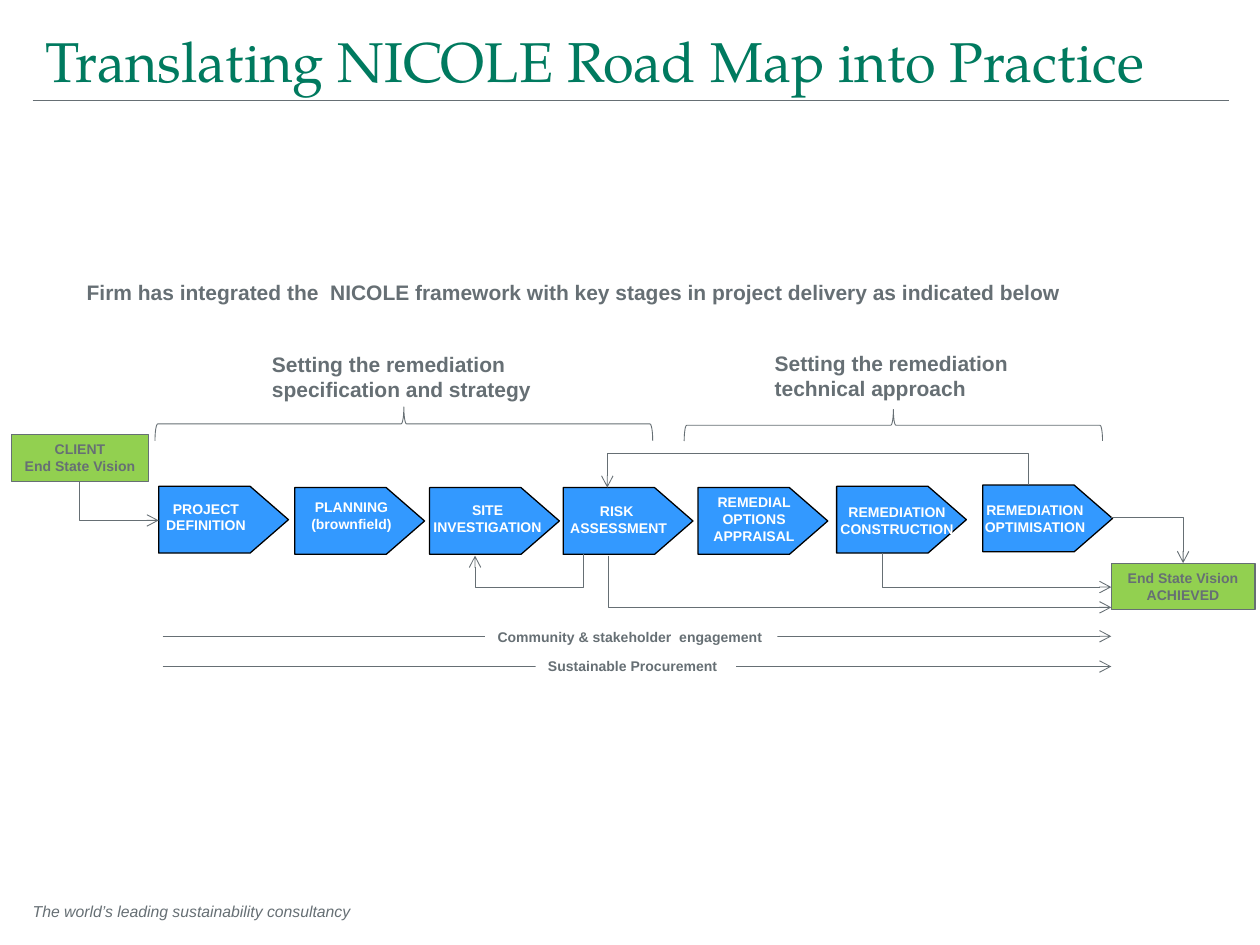
from lxml import etree
from pptx import Presentation
from pptx.dml.color import RGBColor
from pptx.enum import shapes, text
from pptx.oxml import ns
from pptx.util import Inches, Pt

COLORS = {"grey": "666F74", "blue": "3399FF", "green": "92D050",
          "title": "007A5F", "white": "FFFFFF", "black": "000000"}
SHAPE = shapes.MSO_SHAPE
LINK = shapes.MSO_CONNECTOR
CENTER = text.PP_ALIGN.CENTER


def rgb(name):
    return RGBColor.from_string(COLORS[name])


def write(sp, lines, size=8, color="grey", font="Arial", bold=True, italic=False,
          align=text.PP_ALIGN.LEFT, wrap=False, insets=(0.1, 0.05),
          anchor=text.MSO_ANCHOR.TOP):
    tf = sp.text_frame
    tf.word_wrap = wrap
    tf.vertical_anchor = anchor
    tf.margin_left = tf.margin_right = Inches(insets[0])
    tf.margin_top = tf.margin_bottom = Inches(insets[1])
    for i, line in enumerate(lines):
        p = tf.add_paragraph() if i else tf.paragraphs[0]
        p.text = line
        p.alignment = align
        p.font.name, p.font.size = font, Pt(size)
        p.font.bold, p.font.italic = bold, italic
        p.font.color.rgb = rgb(color)


def label(s, box, lines, **style):
    write(s.shapes.add_textbox(*map(Inches, box)), lines, **style)


def shape(s, kind, box, fill=None, line=None, width=0.75):
    sp = s.shapes.add_shape(kind, *map(Inches, box))
    sp.shadow.inherit = False
    if fill:
        sp.fill.solid()
        sp.fill.fore_color.rgb = rgb(fill)
    else:
        sp.fill.background()
    if line:
        sp.line.color.rgb = rgb(line)
        sp.line.width = Pt(width)
    else:
        sp.line.fill.background()
    return sp


def connect(s, start, end, kind=LINK.STRAIGHT, arrow=True):
    c = s.shapes.add_connector(kind, *map(Inches, start + end))
    c.line.color.rgb = rgb("grey")
    c.line.width = Pt(0.5)
    if arrow:
        ln = c.line._get_or_add_ln()
        etree.SubElement(ln, ns.qn("a:tailEnd"), type="arrow")
    etree.SubElement(c._element.spPr, ns.qn("a:effectLst"))
    return c


def elbow_across(s, start, end):
    c = connect(s, start, end, LINK.ELBOW)
    c._element.spPr.find(ns.qn("a:prstGeom")).set("prst", "bentConnector2")


def elbow_down(s, start, end, bend=None):
    (x1, y1), (x2, y2) = start, end
    cx, cy = (x1 + x2) / 2, (y1 + y2) / 2
    w, h = y2 - y1, abs(x2 - x1)
    c = connect(s, (cx - w / 2, cy - h / 2), (cx + w / 2, cy + h / 2), LINK.ELBOW)
    xfrm = c._element.spPr.find(ns.qn("a:xfrm"))
    xfrm.set("rot", str(90 * 60000))
    if x2 > x1:
        xfrm.set("flipV", "1")
    geom = c._element.spPr.find(ns.qn("a:prstGeom"))
    if bend is None:
        geom.set("prst", "bentConnector2")
    else:
        adj = round((bend - y1) / w * 100000)
        etree.SubElement(geom.find(ns.qn("a:avLst")), ns.qn("a:gd"),
                         name="adj1", fmla=f"val {adj}")


def header_and_footer(s):
    connect(s, (0.26, 0.8), (9.75, 0.8), arrow=False)
    label(s, (0.26, 0.18, 9.49, 0.6), ["Translating NICOLE Road Map into Practice"],
          size=32, color="title", font="TeX Gyre Pagella", bold=False, wrap=True,
          anchor=text.MSO_ANCHOR.MIDDLE)
    label(s, (0.26, 7.11, 4.91, 0.25), ["The world’s leading sustainability consultancy"],
          size=9, bold=False, italic=True, wrap=True, insets=(0, 0.05))


def stage(s, x, y, dx, dy, w, lines):
    sp = shape(s, SHAPE.PENTAGON, (x, y, 1.03, 0.53), "blue", "black")
    sp.adjustments[0] = 0.575
    label(s, (x + dx, y + dy, w, 0.4), lines, color="white", align=CENTER,
          wrap=True, insets=(0.04, 0.04))


def phase(s, x, y, w, h, lines, text_box):
    label(s, text_box, lines, size=12)
    box = (x + (w - h) / 2, y - (w - h) / 2, h, w)
    sp = shape(s, SHAPE.LEFT_BRACE, box, line="grey", width=0.5)
    sp.rotation = 90
    sp.adjustments[0] = 0.08


def end_state(s, box, lines):
    sp = shape(s, SHAPE.RECTANGLE, box, "green", "grey")
    write(sp, lines, align=CENTER)


def ongoing_activity(s, y, box, name):
    connect(s, (1.29, y), (8.82, y))
    write(shape(s, SHAPE.RECTANGLE, box, "white"), [name])


def process(s):
    stages = [
        (1.26, 3.86, 0, 0.07, 0.75, ["PROJECT DEFINITION"]),
        (2.34, 3.87, 0, 0.05, 0.9, ["PLANNING", "(brownfield)"]),
        (3.41, 3.87, -0.13, 0.07, 1.18, ["SITE", "INVESTIGATION"]),
        (4.47, 3.87, 0, 0.08, 0.88, ["RISK ", "ASSESSMENT"]),
        (5.54, 3.87, 0.05, 0.01, 0.79, ["REMEDIAL OPTIONS", "APPRAISAL"]),
        (6.64, 3.86, -0.06, 0.1, 1.08, ["REMEDIATION", "CONSTRUCTION"]),
        (7.8, 3.85, -0.05, 0.09, 0.93, ["REMEDIATION", "OPTIMISATION"]),
    ]
    for args in stages:
        stage(s, *args)
    end_state(s, (0.09, 3.45, 1.09, 0.37), ["CLIENT", "End State Vision"])
    end_state(s, (8.82, 4.47, 1.14, 0.37), ["End State Vision", "ACHIEVED"])
    elbow_down(s, (0.63, 3.82), (1.26, 4.13))
    elbow_down(s, (7, 4.39), (8.82, 4.66))
    elbow_down(s, (4.83, 4.41), (8.82, 4.82))
    elbow_down(s, (4.63, 4.4), (3.77, 4.41), bend=4.67)
    elbow_down(s, (8.16, 3.85), (4.82, 3.87), bend=3.6)
    elbow_across(s, (8.82, 4.11), (9.39, 4.47))


def main():
    prs = Presentation()
    prs.slide_width, prs.slide_height = Inches(10), Inches(7.5)
    s = prs.slides.add_slide(prs.slide_layouts[6])
    header_and_footer(s)
    label(s, (0.59, 2.17, 8.07, 0.3),
          ["Firm has integrated the  NICOLE framework with key stages "
           "in project delivery as indicated below"], size=12)
    phase(s, 1.23, 3.23, 3.95, 0.27,
          ["Setting the remediation", "specification and strategy"],
          (2.06, 2.74, 2.28, 0.5))
    phase(s, 5.43, 3.25, 3.32, 0.25,
          ["Setting the remediation", "technical approach"],
          (6.05, 2.73, 2.07, 0.5))
    process(s)
    ongoing_activity(s, 5.05, (3.85, 4.94, 2.32, 0.24), "Community & stakeholder  engagement")
    ongoing_activity(s, 5.29, (4.25, 5.17, 1.59, 0.24), "Sustainable Procurement")
    prs.save("out.pptx")


if __name__ == "__main__":
    main()
